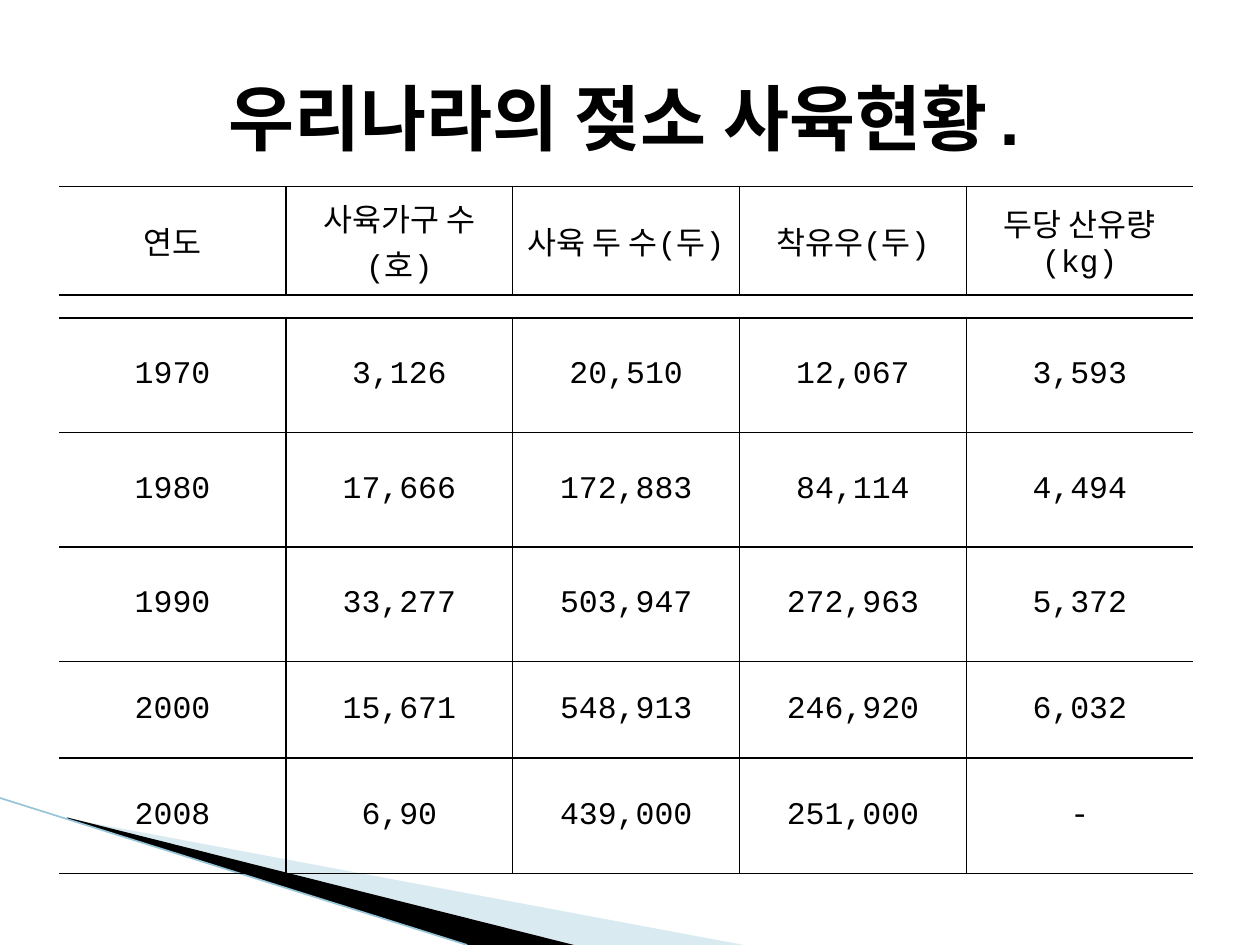
"""Build a slide with a table of dairy cattle figures by year."""
from dataclasses import dataclass

from lxml import etree
from pptx import Presentation
from pptx.dml.color import RGBColor
from pptx.enum.shapes import MSO_CONNECTOR
from pptx.enum.text import MSO_ANCHOR, MSO_AUTO_SIZE, PP_ALIGN
from pptx.oxml.ns import qn
from pptx.util import Pt

CENTER = PP_ALIGN.CENTER
MIDDLE = MSO_ANCHOR.MIDDLE
FIXED = MSO_AUTO_SIZE.NONE
STRAIGHT = MSO_CONNECTOR.STRAIGHT
BLACK = RGBColor(0x00, 0x00, 0x00)
PALE = RGBColor(0xA0, 0xCB, 0xDC)
TEAL = RGBColor(0x97, 0xC5, 0xD8)
FACE = "Courier New"
COL = 129.6
HEIGHTS = [62, 13, 65.5, 65.5, 65.5, 55, 66]
ROWS = [
    ["연도", "사육가구 수(호)", "사육 두 수(두)", "착유우(두)", "두당 산유량(kg)"],
    [""] * 5,
    ["1970", "3,126", "20,510", "12,067", "3,593"],
    ["1980", "17,666", "172,883", "84,114", "4,494"],
    ["1990", "33,277", "503,947", "272,963", "5,372"],
    ["2000", "15,671", "548,913", "246,920", "6,032"],
    ["2008", "6,90", "439,000", "251,000", "-"],
]


@dataclass
class Wedge:
    """A filled outline with its corners in points."""
    points: list[tuple[float, float]]
    color: RGBColor
    alpha: int = 100


WEDGES = [
    Wedge([(39.6, 468.4), (425, 540), (328.3, 540), (39.6, 468)], PALE, 40),
    Wedge([(38.2, 467.4), (328, 540), (267, 540), (38.9, 468)], BLACK),
]


def draw_wedge(slide, wedge: Wedge) -> None:
    """Draw one wedge."""
    pen = slide.shapes.build_freeform(*wedge.points[0], scale=Pt(1))
    pen.add_line_segments(wedge.points[1:])
    shape = pen.convert_to_shape()
    shape.shadow.inherit = False
    shape.fill.solid()
    shape.fill.fore_color.rgb = wedge.color
    shape.line.fill.background()
    if wedge.alpha < 100:
        tint = shape.fill._xPr.find(".//" + qn("a:srgbClr"))
        etree.SubElement(tint, qn("a:alpha"), val=str(wedge.alpha * 1000))


def draw_edge(slide) -> None:
    """Draw the thin line along the wedges."""
    edge = slide.shapes.add_connector(STRAIGHT, 0, Pt(456), Pt(267), Pt(540))
    edge.line.color.rgb = TEAL
    edge.line.width = Pt(0.95)
    etree.SubElement(edge._element.spPr, qn("a:effectLst"))


def set_edges(cell, shown: set[str]) -> None:
    """Rule the shown sides of a cell and clear the others."""
    props = cell._tc.get_or_add_tcPr()
    for side in "LRTB":
        line = etree.SubElement(props, qn("a:ln" + side), w=str(Pt(1)))
        if side in shown:
            fill = etree.SubElement(line, qn("a:solidFill"))
            etree.SubElement(fill, qn("a:srgbClr"), val=str(BLACK))
        else:
            etree.SubElement(line, qn("a:noFill"))


def style_text(frame, size: float, bold: bool) -> None:
    """Centre the text and set its font."""
    para = frame.paragraphs[0]
    para.alignment = CENTER
    for run in para.runs:
        run.font.name = FACE
        run.font.size = Pt(size)
        run.font.bold = bold
        run.font.color.rgb = BLACK


def draw_table(slide) -> None:
    """Draw the table with open left and right sides."""
    last = len(ROWS[0]) - 1
    frame = slide.shapes.add_table(
        len(ROWS), last + 1, Pt(33.8), Pt(106.7), Pt(COL * 5), Pt(sum(HEIGHTS)))
    table = frame.table
    table.first_row = table.horz_banding = False
    for col in table.columns:
        col.width = Pt(COL)
    for r, (row, high) in enumerate(zip(ROWS, HEIGHTS)):
        table.rows[r].height = Pt(high)
        for c, text in enumerate(row):
            cell = table.cell(r, c)
            shown = {"T", "B"}
            if text:
                shown |= ({"L"} if c else set()) | ({"R"} if c < last else set())
            set_edges(cell, shown)
            cell.fill.background()
            cell.vertical_anchor = MIDDLE
            if text:
                cell.text_frame.text = text
                style_text(cell.text_frame, 18, False)
            else:
                cell.margin_top = cell.margin_bottom = 0
                para = cell.text_frame.paragraphs[0]._p
                etree.SubElement(para, qn("a:endParaRPr"), sz="800")
    table.cell(1, 0).merge(table.cell(1, last))


def draw_title(slide) -> None:
    """Fill and place the title."""
    title = slide.shapes.title
    title.left, title.top, title.width, title.height = map(Pt, (36, 21.6, 648, 90))
    frame = title.text_frame
    frame.text = "우리나라의 젖소 사육현황."
    frame.word_wrap = True
    frame.auto_size = FIXED
    frame.vertical_anchor = MIDDLE
    style_text(frame, 41, True)


def main() -> None:
    """Build and save the slide."""
    deck = Presentation()
    deck.slide_width, deck.slide_height = Pt(720), Pt(540)
    slide = deck.slides.add_slide(deck.slide_layouts[5])
    for wedge in WEDGES:
        draw_wedge(slide, wedge)
    draw_edge(slide)
    draw_table(slide)
    draw_title(slide)
    deck.save("out.pptx")


if __name__ == "__main__":
    main()
